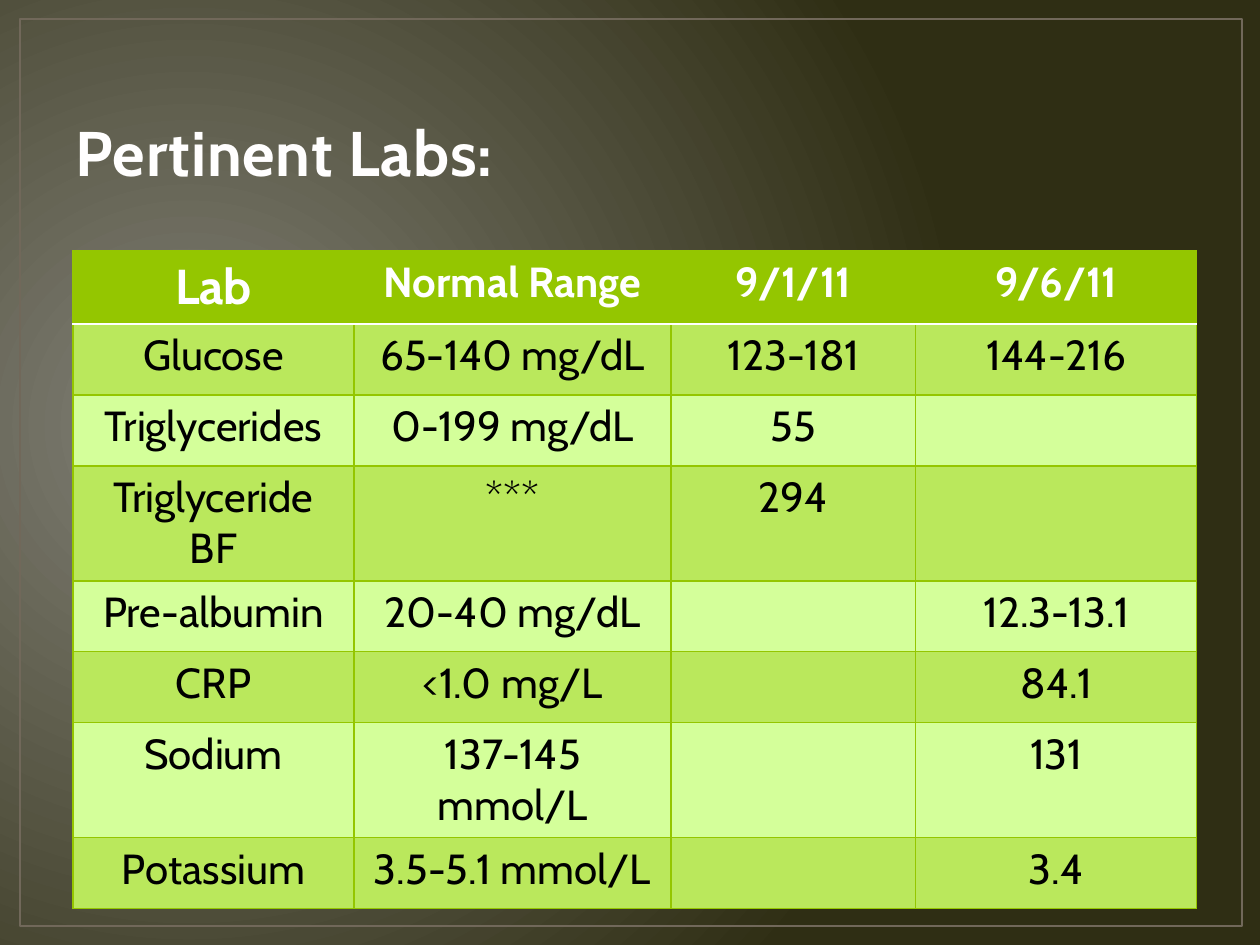
from lxml import etree
from pptx import Presentation
from pptx.dml.color import RGBColor
from pptx.enum.shapes import MSO_SHAPE as SHAPE
from pptx.enum.text import MSO_ANCHOR as ANCHOR, PP_ALIGN as ALIGN
from pptx.oxml import parse_xml
from pptx.oxml.ns import nsdecls, qn
from pptx.util import Pt

PX = 914400 // 126
FONT = "Cabin"
GREEN, BAND, PALE = "94C600", "BAE85C", "D4FF9A"


def rgb(color):
    return RGBColor.from_string(color)


def add_run(p, text, size, color, bold=False):
    r = p.add_run()
    r.text = text
    r.font.name, r.font.size, r.font.bold = FONT, Pt(size), bold
    r.font.color.rgb = rgb(color)
    return r


prs = Presentation()
prs.slide_width, prs.slide_height = 1260 * PX, 945 * PX
s = prs.slides.add_slide(prs.slide_layouts[6])

# Background: radial gradient
s._element.cSld.insert(0, parse_xml(
    f'<p:bg {nsdecls("p", "a")}><p:bgPr><a:gradFill rotWithShape="1"><a:gsLst>'
    '<a:gs pos="0"><a:srgbClr val="818076"/></a:gs>'
    '<a:gs pos="100000"><a:srgbClr val="2F2E14"/></a:gs></a:gsLst>'
    '<a:path path="circle"><a:fillToRect l="15000" t="50000" r="85000" b="60000"/></a:path>'
    '</a:gradFill><a:effectLst/></p:bgPr></p:bg>'))

# Frame
frame = s.shapes.add_shape(SHAPE.RECTANGLE, 20 * PX, 19 * PX, 1222 * PX, 907 * PX)
frame.shadow.inherit = False
frame.fill.background()
frame.line.color.rgb = rgb("71685A")
frame.line.width = Pt(1.5)

# Title
tf = s.shapes.add_textbox(63 * PX, 38 * PX, 1134 * PX, 157 * PX).text_frame
tf.word_wrap = True
tf.vertical_anchor = ANCHOR.BOTTOM
r = add_run(tf.paragraphs[0], "Pertinent Labs:", 36, "FFFEFE", True)
r.font._element.set("spc", "50")

# Lab table
rows = [
    ("Lab", "Normal Range", "9/1/11", "9/6/11"),
    ("Glucose", "65-140 mg/dL", "123-181", "144-216"),
    ("Triglycerides", "0-199 mg/dL", "55", ""),
    ("Triglyceride BF", "***", "294", ""),
    ("Pre-albumin", "20-40 mg/dL", "", "12.3-13.1"),
    ("CRP", "<1.0 mg/L", "", "84.1"),
    ("Sodium", "137-145 mmol/L", "", "131"),
    ("Potassium", "3.5-5.1 mmol/L", "", "3.4"),
]
widths = [281, 317, 245, 281]
heights = [73, 71, 71, 115, 71, 71, 115, 71]
table = s.shapes.add_table(len(rows), len(widths), 73 * PX, 251 * PX,
                           sum(widths) * PX, sum(heights) * PX).table
for col, width in zip(table.columns, widths):
    col.width = width * PX
for row, height in zip(table.rows, heights):
    row.height = height * PX

for i, row in enumerate(rows):
    header = i == 0
    for j, text in enumerate(row):
        cell = table.cell(i, j)
        cell.fill.solid()
        cell.fill.fore_color.rgb = rgb(GREEN if header else BAND if i % 2 else PALE)
        p = cell.text_frame.paragraphs[0]
        p.alignment = ALIGN.CENTER
        if text:
            add_run(p, text, 28 if text == "Lab" else 24,
                    "FFFFFF" if header else "000000", header)

        # Borders: green, with a white rule under the header
        tcPr = cell._tc.get_or_add_tcPr()
        for k, side in enumerate(("lnL", "lnR", "lnT", "lnB")):
            rule = (i, side) in ((0, "lnB"), (1, "lnT"))
            ln = etree.Element(qn(f"a:{side}"), w=str(Pt(1.25 if rule else 0.75)))
            fill = etree.SubElement(ln, qn("a:solidFill"))
            etree.SubElement(fill, qn("a:srgbClr"), val="FFFFFF" if rule else GREEN)
            tcPr.insert(k, ln)

prs.save("out.pptx")
